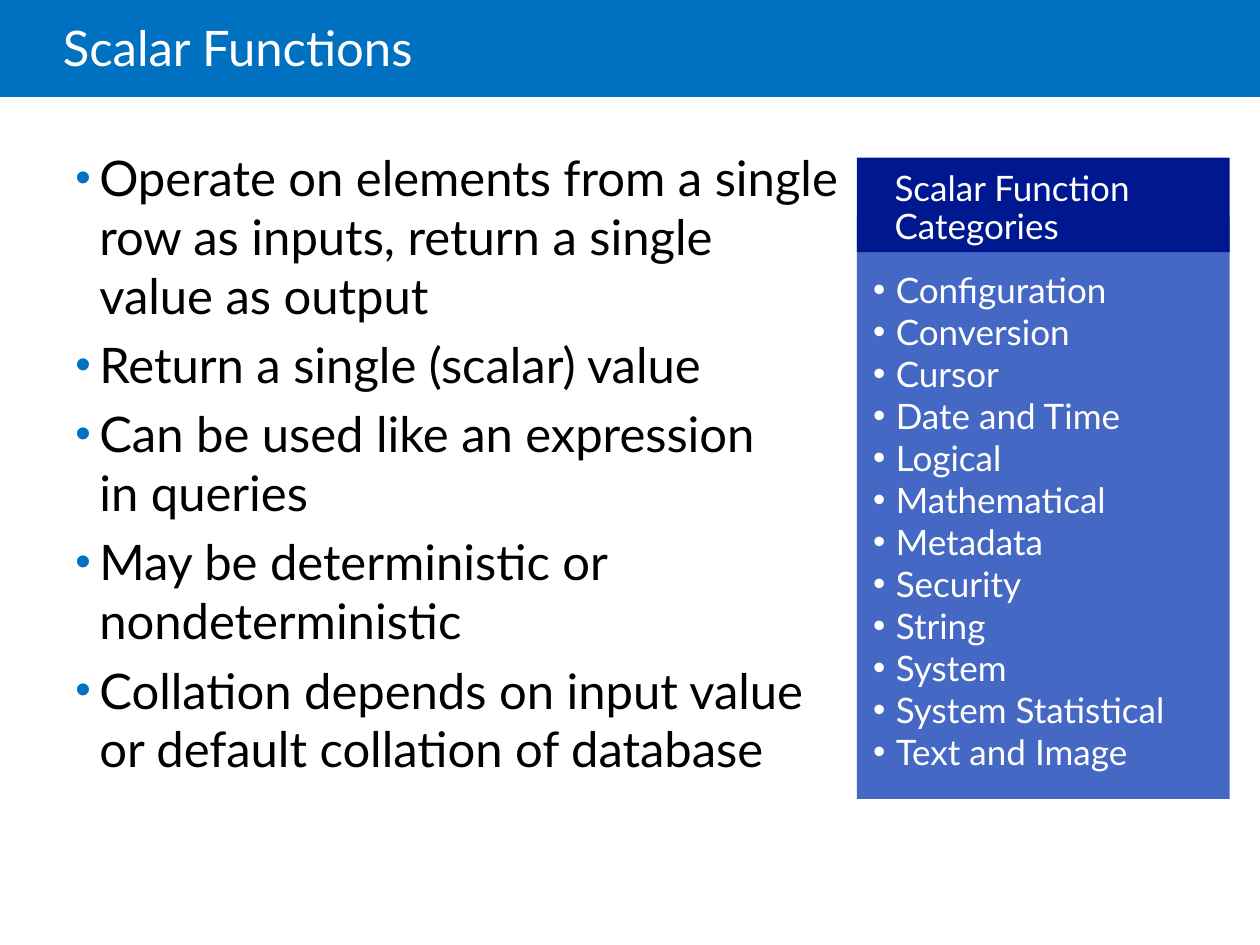
from lxml.etree import SubElement
from pptx import Presentation
from pptx.dml.color import RGBColor
from pptx.enum.shapes import MSO_SHAPE as SHAPE
from pptx.enum.text import MSO_ANCHOR as ANCHOR
from pptx.oxml.ns import qn
from pptx.util import Inches, Pt

# Grid: 100 columns by 75 rows
CELL = Inches(0.1)
BLUE, NAVY, PANEL, WHITE, BLACK = "0070C0", "00188F", "4668C5", "FFFFFF", "000000"

prs = Presentation()
prs.slide_width, prs.slide_height = 100 * CELL, 75 * CELL
slide = prs.slides.add_slide(prs.slide_layouts[6])


def block(left, top, width, height, fill=None, kind=SHAPE.RECTANGLE):
    """Filled shape, or a text box when there is no fill; lengths in cells."""
    box = [round(n * CELL) for n in (left, top, width, height)]
    if fill is None:
        return slide.shapes.add_textbox(*box)
    shape = slide.shapes.add_shape(kind, *box)
    shape.shadow.inherit = False
    shape.fill.solid()
    shape.fill.fore_color.rgb = RGBColor.from_string(fill)
    shape.line.fill.background()
    if kind == SHAPE.ROUNDED_RECTANGLE:
        shape.adjustments[0] = 0
    return shape


def write(shape, lines, size, color, margins, anchor=ANCHOR.TOP,
          spacing=None, before=0, bullet=None):
    """Fill a shape with paragraphs; bullet is (indent, color, size percent)."""
    frame = shape.text_frame
    frame.word_wrap = True
    frame.vertical_anchor = anchor
    for side, cells in zip(("left", "top", "right", "bottom"), margins):
        setattr(frame, f"margin_{side}", round(cells * CELL))
    for i, line in enumerate(lines):
        para = frame.paragraphs[0] if i == 0 else frame.add_paragraph()
        para.text = line
        for name, value in {"alignment": 1, "line_spacing": spacing,
                            "space_before": Pt(before)}.items():
            setattr(para, name, value)
        for run in para.runs:
            run.font.name, run.font.size = "Lato", Pt(size)
            run.font.color.rgb = RGBColor.from_string(color)
        if bullet:
            indent, bullet_color, percent = bullet
            props = para._p.get_or_add_pPr()
            props.set("marL", str(round(indent * CELL)))
            props.set("indent", str(-round(indent * CELL)))
            tint = SubElement(props, qn("a:buClr"))
            SubElement(tint, qn("a:srgbClr"), val=bullet_color)
            SubElement(props, qn("a:buSzPct"), val=str(percent * 1000))
            SubElement(props, qn("a:buFont"), typeface="Arial")
            SubElement(props, qn("a:buChar"), char="•")


# Title band
block(0, 0, 100, 7.7, BLUE)
write(block(5, 0, 85, 8.1), ["Scalar Functions"], 28, WHITE,
      (0, 0.5, 1, 0.5), ANCHOR.MIDDLE, spacing=0.85)

# Main points
points = [
    "Operate on elements from a single\nrow as inputs, return a single\nvalue as output",
    "Return a single (scalar) value",
    "Can be used like an expression\nin queries",
    "May be deterministic or\nnondeterministic",
    "Collation depends on input value\nor default collation of database",
]
write(block(5, 11.2, 85.6, 58.5), points, 28, BLACK, (1, 0.5, 1, 0.5),
      before=6, bullet=(1.9, BLUE, 90))

# Category panel
panel_left, panel_width = 68, 29.6
block(panel_left, 17.2, panel_width, 46.2, PANEL, SHAPE.ROUNDED_RECTANGLE)
header = block(panel_left, 12.5, panel_width, 7.5, NAVY, SHAPE.ROUNDED_RECTANGLE)
write(header, ["Scalar Function Categories"], 20, WHITE,
      (3, 1.2, 1, 0.5), ANCHOR.MIDDLE, spacing=0.9)

categories = [
    "Configuration", "Conversion", "Cursor", "Date and Time", "Logical",
    "Mathematical", "Metadata", "Security", "String", "System",
    "System Statistical", "Text and Image",
]
write(block(69.3, 21.3, 26.4, 36.8), categories, 20, WHITE, (0, 0, 0, 0),
      bullet=(1.8, WHITE, 100))

prs.save("out.pptx")
